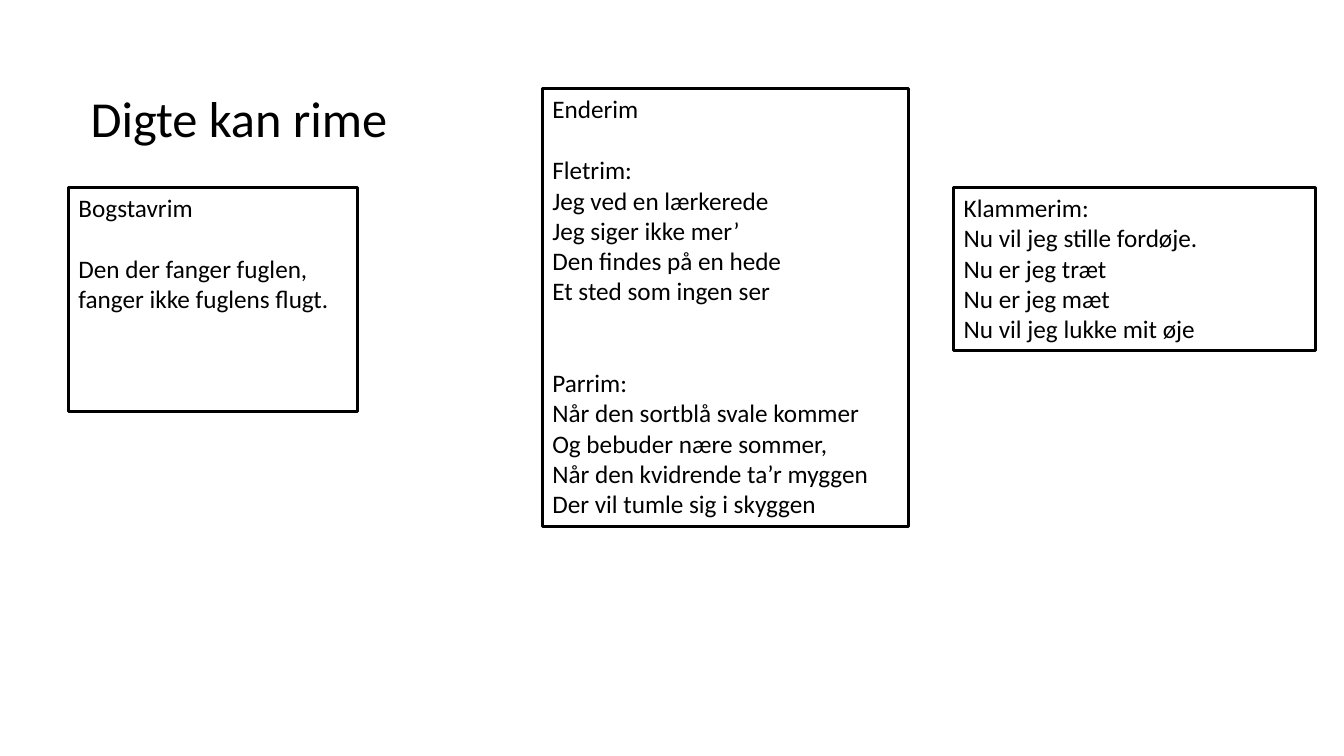
from dataclasses import dataclass

from pptx import Presentation
from pptx import util as u
from pptx.dml.color import RGBColor
from pptx.enum import shapes, text
from pptx.shapes.autoshape import Shape
from pptx.slide import Slide

BLACK = "000000"
LINE_PITCH = 22


@dataclass(frozen=True)
class Stanza:
    lines: tuple[str, ...]
    blank_lines_before: int = 0


@dataclass(frozen=True)
class RhymeBox:
    left: float
    top: float
    width: float
    height: float
    stanzas: tuple[Stanza, ...]


RHYME_BOXES = (
    RhymeBox(0.68, 1.86, 2.87, 2.22, (
        Stanza(("Bogstavrim",)),
        Stanza(("Den der fanger fuglen, fanger ikke fuglens flugt.",), 1),
    )),
    RhymeBox(5.38, 0.88, 3.63, 4.34, (
        Stanza(("Enderim",)),
        Stanza((
            "Fletrim:",
            "Jeg ved en lærkerede",
            "Jeg siger ikke mer’",
            "Den findes på en hede",
            "Et sted som ingen ser",
        ), 1),
        Stanza((
            "Parrim:",
            "Når den sortblå svale kommer",
            "Og bebuder nære sommer,",
            "Når den kvidrende ta’r myggen",
            "Der vil tumle sig i skyggen",
        ), 2),
    )),
    RhymeBox(9.46, 1.86, 3.59, 1.62, (
        Stanza((
            "Klammerim:",
            "Nu vil jeg stille fordøje.",
            "Nu er jeg træt",
            "Nu er jeg mæt",
            "Nu vil jeg lukke mit øje",
        )),
    )),
)


def color(value: str) -> RGBColor:
    return RGBColor.from_string(value)


def write(box: Shape, words: str, *, size: float = 18, space_before: float = 0) -> None:
    frame = box.text_frame
    frame.word_wrap = True
    frame.vertical_anchor = text.MSO_ANCHOR.TOP
    para = frame.paragraphs[0] if not frame.text else frame.add_paragraph()
    para.alignment = text.PP_ALIGN.LEFT
    para.space_before = u.Pt(space_before)
    span = para.add_run()
    span.text = words
    span.font.name = "Calibri"
    span.font.size = u.Pt(size)
    span.font.color.rgb = color(BLACK)


def draw_rhyme_box(page: Slide, rhyme: RhymeBox) -> None:
    box = page.shapes.add_shape(
        shapes.MSO_SHAPE.RECTANGLE,
        u.Inches(rhyme.left), u.Inches(rhyme.top),
        u.Inches(rhyme.width), u.Inches(rhyme.height),
    )
    box.shadow.inherit = False
    box.fill.background()
    box.line.color.rgb = color(BLACK)
    box.line.width = u.Pt(2.25)
    for stanza in rhyme.stanzas:
        for index, line in enumerate(stanza.lines):
            gap = 0 if index else stanza.blank_lines_before * LINE_PITCH
            write(box, line, space_before=gap)


def main() -> None:
    deck = Presentation()
    deck.slide_width = u.Inches(13.33)
    deck.slide_height = u.Inches(7.5)
    page = deck.slides.add_slide(deck.slide_layouts[6])
    title = page.shapes.add_textbox(
        u.Inches(0.8), u.Inches(0.82), u.Inches(11.66), u.Inches(1.04)
    )
    write(title, "Digte kan rime", size=36)
    for rhyme in RHYME_BOXES:
        draw_rhyme_box(page, rhyme)
    deck.save("out.pptx")


if __name__ == "__main__":
    main()
